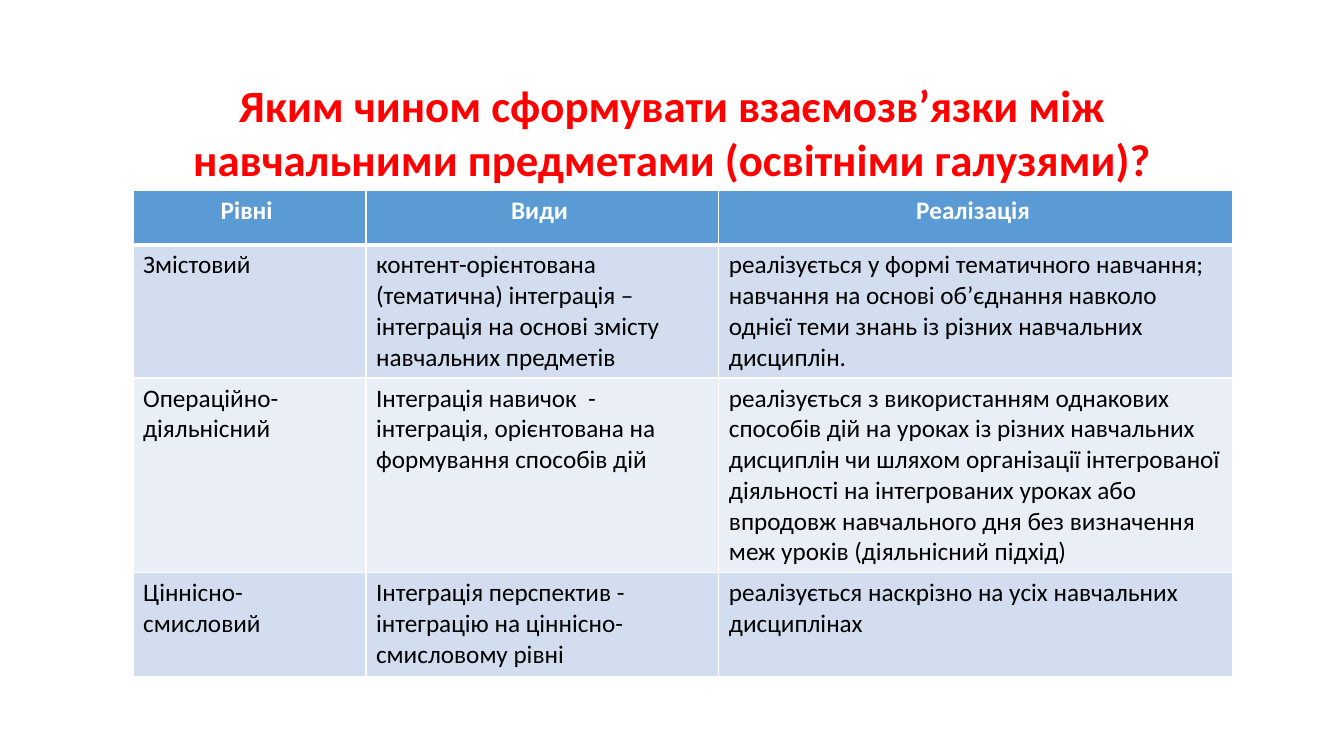
from lxml import etree
from pptx import Presentation
from pptx.dml.color import RGBColor
from pptx.enum import text
from pptx.oxml.ns import qn
from pptx.util import Inches, Pt

TITLE = "Яким чином сформувати взаємозв’язки між навчальними предметами (освітніми галузями)?"
ROWS = [
    ("Рівні ", "Види ", "Реалізація "),
    ("Змістовий",
     "контент-орієнтована (тематична) інтеграція – інтеграція на основі змісту навчальних предметів",
     "реалізується у формі тематичного навчання; навчання на основі об’єднання навколо "
     "однієї теми знань із різних навчальних дисциплін."),
    ("Операційно-діяльнісний",
     "Інтеграція навичок  - інтеграція, орієнтована на формування способів дій",
     "реалізується з використанням однакових способів дій на уроках із різних навчальних "
     "дисциплін чи шляхом організації інтегрованої діяльності на інтегрованих уроках або "
     "впродовж навчального дня без визначення меж уроків (діяльнісний підхід)"),
    ("Ціннісно-смисловий",
     "Інтеграція перспектив - інтеграцію на ціннісно-смисловому рівні",
     "реалізується наскрізно на усіх навчальних дисциплінах"),
]
COL_WIDTHS = (2.31, 3.5, 5.1)
ROW_HEIGHTS = (0.54, 1.31, 1.93, 1.03)
COLORS = {"title": "FF0000", "header": "5B9BD5", "odd": "D2DEEF",
          "even": "EAEFF7", "white": "FFFFFF", "text": "000000"}


def color(name):
    return RGBColor.from_string(COLORS[name])


def format_runs(p, size, name, bold):
    for r in p.runs:
        r.font.name = "Calibri"
        r.font.size = Pt(size)
        r.font.bold = bold
        r.font.color.rgb = color(name)


def set_borders(cell, widths):
    """Draw white cell borders; widths maps L, R, T, B to points, in that order."""
    tc_pr = cell._tc.get_or_add_tcPr()
    for i, (side, width) in enumerate(widths.items()):
        ln = etree.Element(qn(f"a:ln{side}"), w=str(Pt(width)))
        fill = etree.SubElement(ln, qn("a:solidFill"))
        etree.SubElement(fill, qn("a:srgbClr"), val=COLORS["white"])
        tc_pr.insert(i, ln)


def add_title(slide):
    sp = slide.shapes.title
    sp.left, sp.top, sp.width, sp.height = map(Inches, (1.67, 0.5, 10, 1.39))
    tf = sp.text_frame
    tf.text = TITLE
    tf.word_wrap = True
    tf.auto_size = text.MSO_AUTO_SIZE.NONE
    tf.vertical_anchor = text.MSO_ANCHOR.BOTTOM
    tf.paragraphs[0].alignment = text.PP_ALIGN.CENTER
    format_runs(tf.paragraphs[0], 32, "title", True)


def add_levels_table(slide):
    frame = slide.shapes.add_table(
        len(ROWS), len(COL_WIDTHS), Inches(1.32), Inches(1.89),
        Inches(sum(COL_WIDTHS)), Inches(sum(ROW_HEIGHTS)))
    table = frame.table
    for column, width in zip(table.columns, COL_WIDTHS):
        column.width = Inches(width)
    for i, values in enumerate(ROWS):
        table.rows[i].height = Inches(ROW_HEIGHTS[i])
        header = i == 0
        band = "header" if header else "odd" if i % 2 else "even"
        borders = {"L": 1, "R": 1, "T": 3 if i == 1 else 1, "B": 3 if header else 1}
        for j, value in enumerate(values):
            cell = table.cell(i, j)
            cell.text = value
            cell.fill.solid()
            cell.fill.fore_color.rgb = color(band)
            set_borders(cell, borders)
            p = cell.text_frame.paragraphs[0]
            p.alignment = text.PP_ALIGN.CENTER if header else text.PP_ALIGN.LEFT
            format_runs(p, 18, "white" if header else "text", header)


def main():
    prs = Presentation()
    prs.slide_width, prs.slide_height = Inches(13.33), Inches(7.5)
    slide = prs.slides.add_slide(prs.slide_layouts[5])
    add_title(slide)
    add_levels_table(slide)
    prs.save("out.pptx")


if __name__ == "__main__":
    main()
